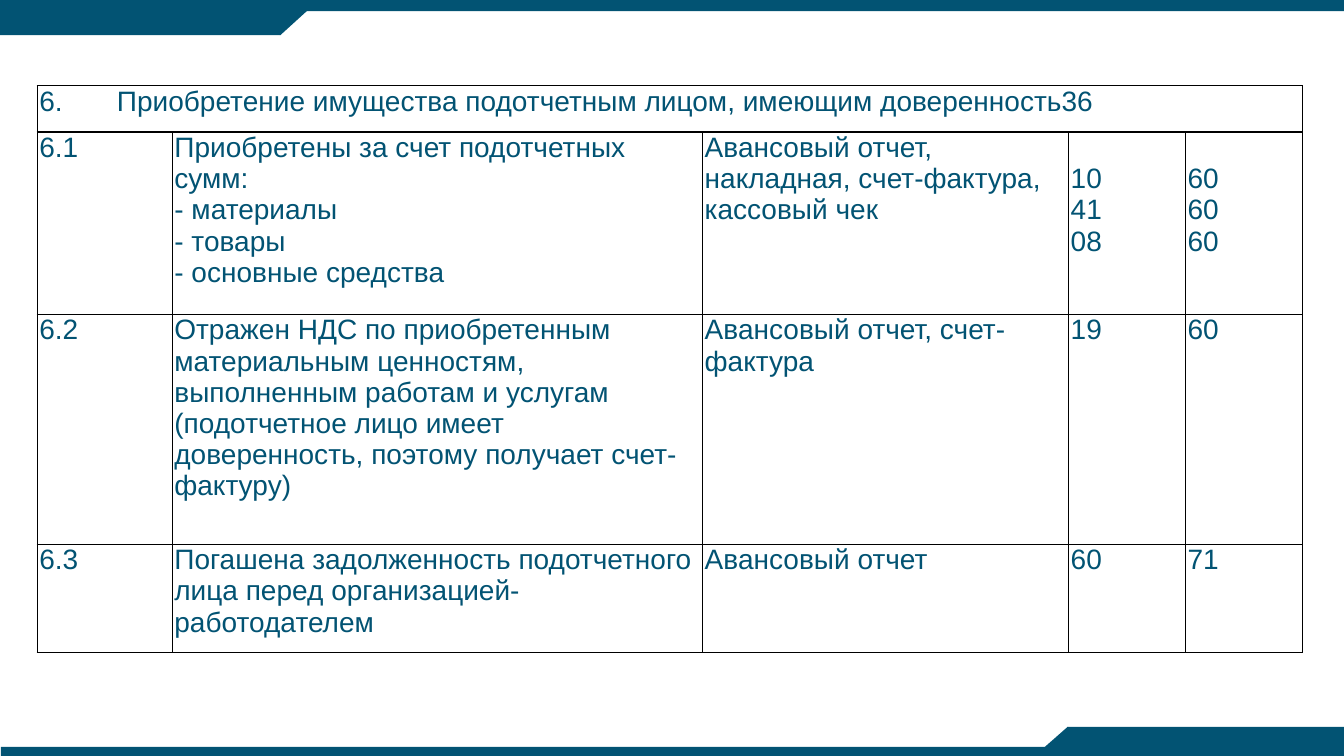
from dataclasses import dataclass

from lxml.etree import SubElement
from pptx import Presentation
from pptx.dml.color import RGBColor
from pptx.enum.shapes import MSO_SHAPE
from pptx.oxml.ns import qn
from pptx.util import Inches, Pt

COLORS = {"teal": "025373", "border": "000000"}
FONT = "Arial"
LINE_HEIGHT = 0.31
COL_WIDTHS = [1.34, 5.26, 3.63, 1.16, 1.16]
HEADING = "6.\tПриобретение имущества подотчетным лицом, имеющим доверенность36"


@dataclass
class Band:
    shape: MSO_SHAPE
    left: float
    top: float
    width: float
    height: float
    rotation: int = 0


@dataclass
class Entry:
    height: float
    texts: list[str]
    skipped_lines: int = 0


BANDS = [
    Band(MSO_SHAPE.RECTANGLE, 0, 0, 13.33, 0.11),
    Band(MSO_SHAPE.RECTANGLE, 0.01, 7.41, 13.32, 0.09),
    Band(MSO_SHAPE.RECTANGLE, 0, 0.05, 2.78, 0.3),
    Band(MSO_SHAPE.FLOWCHART_MERGE, 2.45, 0.05, 0.66, 0.3),
    Band(MSO_SHAPE.RECTANGLE, 10.59, 7.21, 2.74, 0.29),
    Band(MSO_SHAPE.FLOWCHART_MERGE, 10.26, 7.21, 0.66, 0.29, 180),
]

ENTRIES = [
    Entry(0.46, [HEADING]),
    Entry(1.81, [
        "6.1",
        "Приобретены за счет подотчетных сумм:\n- материалы\n- товары\n- основные средства",
        "Авансовый отчет, накладная, счет-фактура, кассовый чек",
        "10\n41\n08",
        "60\n60\n60",
    ], skipped_lines=1),
    Entry(2.28, [
        "6.2",
        "Отражен НДС по приобретенным материальным ценностям, выполненным работам "
        "и услугам (подотчетное лицо имеет доверенность, поэтому получает счет-фактуру)",
        "Авансовый отчет, счет-фактура",
        "19",
        "60",
    ]),
    Entry(1.07, [
        "6.3",
        "Погашена задолженность подотчетного лица перед организацией-работодателем",
        "Авансовый отчет",
        "60",
        "71",
    ]),
]


def draw_band(s, band: Band) -> None:
    sp = s.shapes.add_shape(
        band.shape, Inches(band.left), Inches(band.top),
        Inches(band.width), Inches(band.height),
    )
    sp.rotation = band.rotation
    sp.shadow.inherit = False
    sp.fill.solid()
    sp.fill.fore_color.rgb = RGBColor.from_string(COLORS["teal"])
    sp.line.fill.background()


def format_cell(cell) -> None:
    cell.margin_left = cell.margin_right = Inches(0.02)
    cell.margin_top = cell.margin_bottom = 0
    tcPr = cell._tc.get_or_add_tcPr()
    for side in ("a:lnL", "a:lnR", "a:lnT", "a:lnB"):
        ln = SubElement(tcPr, qn(side), w=str(Pt(1)))
        SubElement(SubElement(ln, qn("a:solidFill")), qn("a:srgbClr"), val=COLORS["border"])
    cell.fill.background()


def write_cell(cell, text: str) -> None:
    tf = cell.text_frame
    tf.text = text
    for p in tf.paragraphs:
        if "\t" in text:
            tabs = SubElement(p._p.get_or_add_pPr(), qn("a:tabLst"))
            SubElement(tabs, qn("a:tab"), pos=str(Inches(0.77)), algn="l")
        p.font.name = FONT
        p.font.size = Pt(20)
        p.font.color.rgb = RGBColor.from_string(COLORS["teal"])


def draw_table(s, entries: list[Entry]) -> None:
    table = s.shapes.add_table(
        len(entries), len(COL_WIDTHS), Inches(0.37), Inches(0.85),
        Inches(sum(COL_WIDTHS)), Inches(sum(e.height for e in entries)),
    ).table
    table.first_row = table.horz_banding = False
    for col, width in zip(table.columns, COL_WIDTHS):
        col.width = Inches(width)
    for cell in table.iter_cells():
        format_cell(cell)
    table.cell(0, 0).merge(table.cell(0, len(COL_WIDTHS) - 1))
    for row, entry in zip(table.rows, entries):
        row.height = Inches(entry.height)
        for i, (cell, text) in enumerate(zip(row.cells, entry.texts)):
            write_cell(cell, text)
            if i >= 3:
                cell.margin_top = Inches(entry.skipped_lines * LINE_HEIGHT)


def main() -> None:
    prs = Presentation()
    prs.slide_width, prs.slide_height = Inches(13.33), Inches(7.5)
    s = prs.slides.add_slide(prs.slide_layouts[6])
    for band in BANDS:
        draw_band(s, band)
    draw_table(s, ENTRIES)
    prs.save("out.pptx")


if __name__ == "__main__":
    main()
